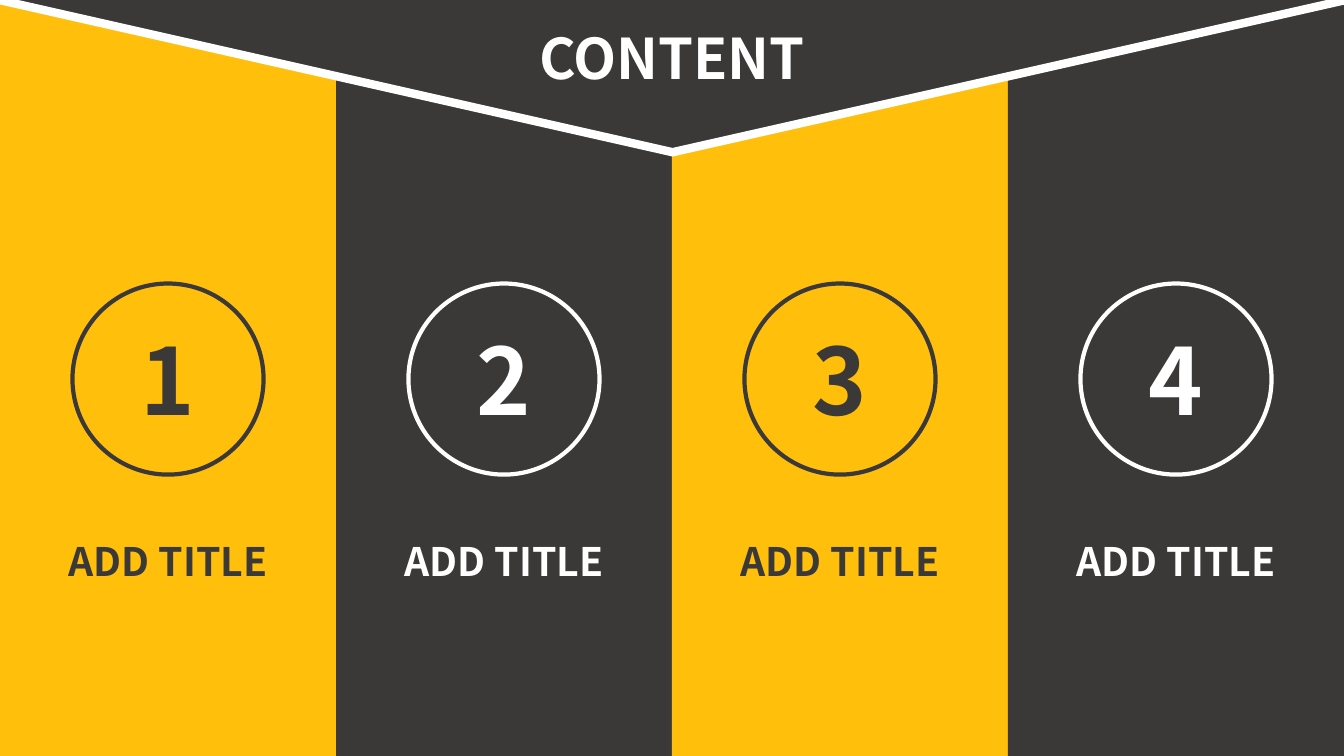
"""Build a contents slide with four numbered columns under a pointed banner."""
from dataclasses import dataclass

from pptx import Presentation
from pptx import util as u
from pptx.dml.color import RGBColor
from pptx.enum import shapes, text
from pptx.oxml import parse_xml
from pptx.oxml.ns import nsdecls
from pptx.shapes.autoshape import Shape
from pptx.slide import Slide

EMU_PER_PX = 9525
PAGE_WIDTH, PAGE_HEIGHT = 1280, 720
COLUMN_WIDTH = PAGE_WIDTH // 4


@dataclass(frozen=True)
class Theme:
    font: str = "Noto Sans CJK SC"
    yellow: RGBColor = RGBColor(0xFF, 0xBF, 0x0B)
    dark: RGBColor = RGBColor(0x3B, 0x38, 0x38)
    white: RGBColor = RGBColor(0xFF, 0xFF, 0xFF)
    title_size: int = 40
    number_size: int = 66
    label_size: int = 28
    banner_line: int = 6
    circle_line: int = 3


@dataclass(frozen=True)
class Box:
    left: int
    top: int
    width: int
    height: int

    def shifted(self, distance: int) -> "Box":
        return Box(self.left + distance, self.top, self.width, self.height)

    def emu(self) -> list[int]:
        return [px * EMU_PER_PX for px in (self.left, self.top, self.width, self.height)]


@dataclass(frozen=True)
class Column:
    number: int
    label: str
    fill: RGBColor
    ink: RGBColor

    @property
    def offset(self) -> int:
        return (self.number - 1) * COLUMN_WIDTH


THEME = Theme()
PANEL = Box(0, 0, COLUMN_WIDTH, PAGE_HEIGHT)
CIRCLE = Box(69, 270, 182, 182)
LABEL = Box(34, 497, 252, 75)
BANNER = Box(-67, -15, 1415, 160)
TITLE = Box(495, 18, 290, 74)
COLUMNS = [
    Column(1, "ADD TITLE", THEME.yellow, THEME.dark),
    Column(2, "ADD TITLE", THEME.dark, THEME.white),
    Column(3, "ADD TITLE", THEME.yellow, THEME.dark),
    Column(4, "ADD TITLE", THEME.dark, THEME.white),
]


def write(shape: Shape, words: str, size: int, color: RGBColor,
          anchor: text.MSO_ANCHOR = text.MSO_ANCHOR.MIDDLE) -> None:
    frame = shape.text_frame
    frame.text = words
    frame.word_wrap = True
    frame.vertical_anchor = anchor
    para = frame.paragraphs[0]
    para.alignment = text.PP_ALIGN.CENTER
    for span in para.runs:
        span.font.name = THEME.font
        span.font.size = u.Pt(size)
        span.font.bold = True
        span.font.color.rgb = color


def outline(shape: Shape, color: RGBColor, points: int) -> None:
    shape.line.color.rgb = color
    shape.line.width = u.Pt(points)


def draw_panel(page: Slide, column: Column) -> None:
    panel = page.shapes.add_shape(shapes.MSO_SHAPE.RECTANGLE, *PANEL.shifted(column.offset).emu())
    panel.shadow.inherit = False
    panel.fill.solid()
    panel.fill.fore_color.rgb = column.fill
    panel.line.fill.background()


def draw_banner(page: Slide) -> None:
    banner = page.shapes.add_shape(shapes.MSO_SHAPE.ISOSCELES_TRIANGLE, *BANNER.emu())
    banner.rotation = 180
    banner.shadow.inherit = False
    banner.fill.solid()
    banner.fill.fore_color.rgb = THEME.dark
    outline(banner, THEME.white, THEME.banner_line)
    banner.line._get_or_add_ln().append(parse_xml(f'<a:miter {nsdecls("a")} lim="800000"/>'))


def draw_entry(page: Slide, column: Column) -> None:
    group = page.shapes.add_group_shape()
    circle = group.shapes.add_shape(shapes.MSO_SHAPE.OVAL, *CIRCLE.shifted(column.offset).emu())
    circle.shadow.inherit = False
    circle.fill.background()
    outline(circle, column.ink, THEME.circle_line)
    write(circle, str(column.number), THEME.number_size, column.ink)
    label = group.shapes.add_textbox(*LABEL.shifted(column.offset).emu())
    write(label, column.label, THEME.label_size, column.ink)


def place_title(page: Slide) -> None:
    title = page.shapes.title
    title.left, title.top, title.width, title.height = TITLE.emu()
    write(title, "CONTENT", THEME.title_size, THEME.white, text.MSO_ANCHOR.TOP)
    title.text_frame.auto_size = text.MSO_AUTO_SIZE.SHAPE_TO_FIT_TEXT
    page.shapes._spTree.append(title._element)


def main() -> None:
    deck = Presentation()
    deck.slide_width = PAGE_WIDTH * EMU_PER_PX
    deck.slide_height = PAGE_HEIGHT * EMU_PER_PX
    page = deck.slides.add_slide(deck.slide_layouts[5])
    for column in COLUMNS:
        draw_panel(page, column)
    draw_banner(page)
    for column in COLUMNS:
        draw_entry(page, column)
    place_title(page)
    deck.save("out.pptx")


if __name__ == "__main__":
    main()
